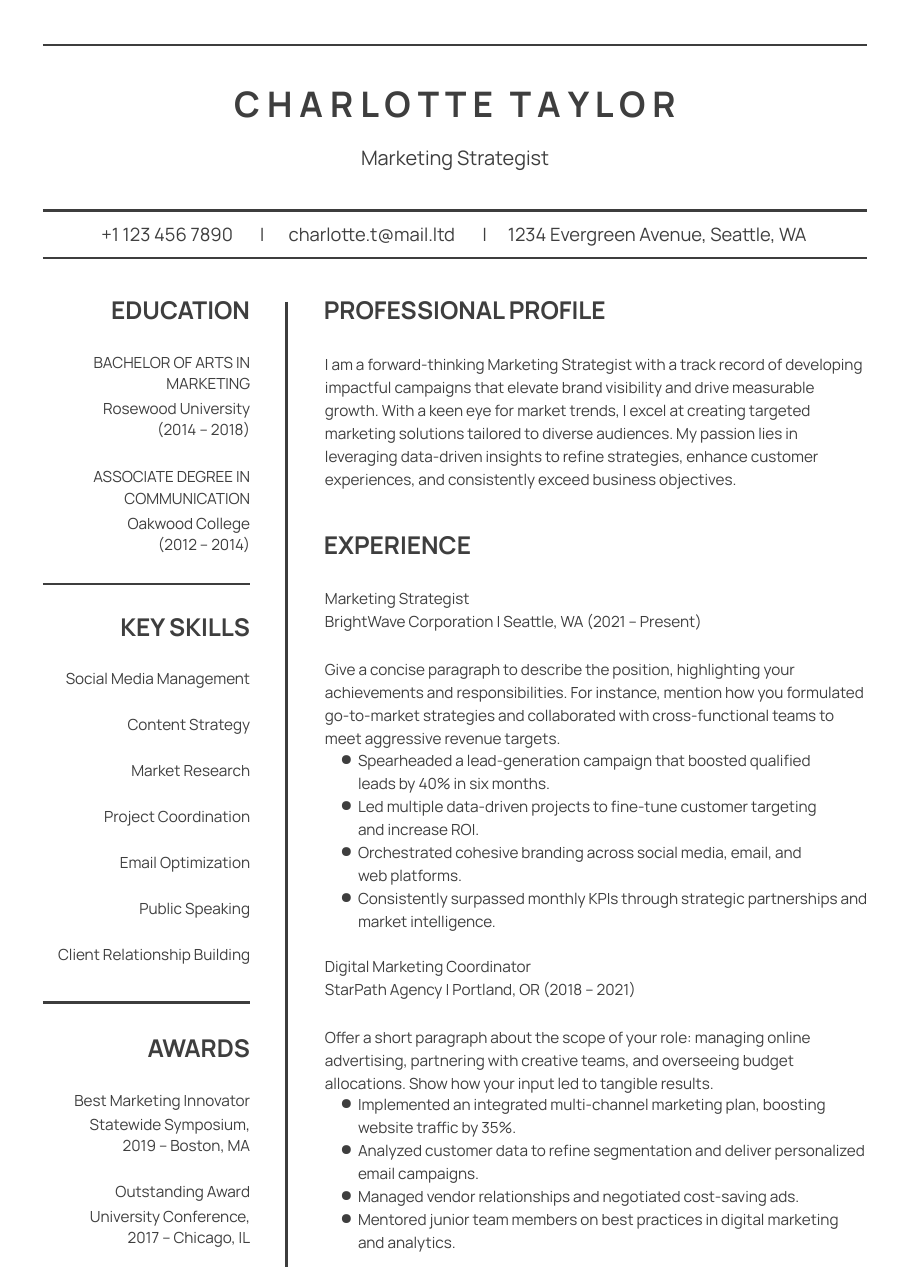
from lxml.etree import SubElement
from pptx import Presentation
from pptx.dml.color import RGBColor
from pptx.enum.shapes import MSO_CONNECTOR
from pptx.enum.text import MSO_AUTO_SIZE, PP_ALIGN
from pptx.oxml.ns import qn
from pptx.util import Inches, Pt

FONT = "Manrope"
INK = "3E3E3E"
RULE = "3D3D3D"
HEAD_H = 0.27
LINE_H = 0.17
BODY_GAP = 0.5


def color(value):
    return RGBColor.from_string(value)


def rule(s, x1, y1, x2, y2):
    ln = s.shapes.add_connector(MSO_CONNECTOR.STRAIGHT, *map(Inches, (x1, y1, x2, y2)))
    ln.line.color.rgb = color(RULE)
    ln.line.width = Pt(1.5)
    SubElement(ln._element.spPr, qn("a:effectLst"))


def add_bullet(p):
    pPr = p._p.get_or_add_pPr()
    pPr.set("marL", str(Inches(0.3)))
    pPr.set("indent", str(Inches(-0.16)))
    SubElement(SubElement(pPr, qn("a:buClr")), qn("a:srgbClr")).set("val", INK)
    SubElement(pPr, qn("a:buChar")).set("char", "●")


def add_tabs(p, stops):
    tabs = SubElement(p._p.get_or_add_pPr(), qn("a:tabLst"))
    for stop in stops:
        tab = SubElement(tabs, qn("a:tab"))
        tab.set("pos", str(Inches(stop)))
        tab.set("algn", "l")


def text(s, x, y, w, h, lines, size=10, bold=False, align=PP_ALIGN.LEFT,
         spacing=1.15, bullets=False):
    """Place a marginless text box with one paragraph per line and return it."""
    tb = s.shapes.add_textbox(*map(Inches, (x, y, w, h)))
    tf = tb.text_frame
    tf.word_wrap = True
    tf.auto_size = MSO_AUTO_SIZE.SHAPE_TO_FIT_TEXT
    tf.margin_left = tf.margin_right = tf.margin_top = tf.margin_bottom = 0
    for i, line in enumerate(lines):
        p = tf.add_paragraph() if i else tf.paragraphs[0]
        p.text = line
        p.alignment = align
        p.line_spacing = spacing
        if bullets:
            add_bullet(p)
        for r in p.runs:
            r.font.name = FONT
            r.font.size = Pt(size)
            r.font.bold = bold
            r.font.color.rgb = color(INK)
    return tb


def heading(s, x, y, w, title, align=PP_ALIGN.LEFT):
    text(s, x, y, w, HEAD_H, [title], 16, True, align, 1.0)


def header(s, x, y, w):
    for dy in (0, 1.5, 1.93):
        rule(s, x, y + dy, x + w, y + dy)
    name = text(s, x, y + 0.34, w, 0.39, ["C H A R L O T T E"], 23, True,
                PP_ALIGN.CENTER, 1.0)
    p = name.text_frame.paragraphs[0]
    for part in (" ", "T A Y L O R"):
        r = p.add_run()
        r.text = part
        r.font.name, r.font.size, r.font.bold = FONT, Pt(23), True
        r.font.color.rgb = color(INK)
    p.runs[1].font._element.set("spc", "600")  # wider gap between the two names
    text(s, x, y + 0.91, w, 0.22, ["Marketing Strategist"], 13,
         align=PP_ALIGN.CENTER, spacing=1.0)
    contact = text(s, x + 0.53, y + 1.62, w - 0.53, 0.2,
                   ["+1 123 456 7890\t|\tcharlotte.t@mail.ltd\t|\t"
                    "1234 Evergreen Avenue, Seattle, WA"], 12, spacing=1.0)
    add_tabs(contact.text_frame.paragraphs[0], (1.44, 1.7, 3.46, 3.69))


def side_entries(s, x, y, w, title, entries, title_h, pitch):
    """Right-aligned heading, then entries of a title and its details."""
    heading(s, x, y, w, title, PP_ALIGN.RIGHT)
    for i, (name, details) in enumerate(entries):
        top = y + BODY_GAP + i * pitch
        text(s, x, top, w, title_h, name, align=PP_ALIGN.RIGHT)
        text(s, x, top + title_h + 0.05, w, 0.36, details, align=PP_ALIGN.RIGHT)


def skills(s, x, y, w, names, pitch=0.418):
    heading(s, x, y, w, "KEY SKILLS", PP_ALIGN.RIGHT)
    for i, name in enumerate(names):
        text(s, x, y + 0.49 + i * pitch, w, LINE_H, [name], align=PP_ALIGN.RIGHT)


def profile(s, x, y, w):
    heading(s, x, y, w, "PROFESSIONAL PROFILE")
    text(s, x + 0.01, y + BODY_GAP, w, 1.43, [
        "I am a forward-thinking Marketing Strategist with a track record of "
        "developing impactful campaigns that elevate brand visibility and drive "
        "measurable growth. With a keen eye for market trends, I excel at creating "
        "targeted marketing solutions tailored to diverse audiences. My passion lies "
        "in leveraging data-driven insights to refine strategies, enhance customer "
        "experiences, and consistently exceed business objectives."], spacing=1.25)


def job(s, x, y, w, role, employer, intro, intro_h, duties):
    text(s, x, y, w, LINE_H, [role])
    text(s, x, y + 0.215, w, LINE_H, [employer])
    text(s, x, y + 0.63, w, intro_h, [intro], spacing=1.25)
    text(s, x, y + 0.63 + intro_h, w, 1.43, duties, spacing=1.25, bullets=True)


def resume(prs):
    s = prs.slides.add_slide(prs.slide_layouts[6])
    left, side_w, main_x, main_w = 0.4, 1.87, 2.94, 4.92
    header(s, 0.39, 0.41, 7.48)
    for y in (5.3, 9.1):
        rule(s, 0.39, y, left + side_w, y)
    rule(s, 2.6, 2.74, 2.6, 11.5)

    side_entries(s, left, 2.68, side_w, "EDUCATION", [
        (["BACHELOR OF ARTS IN MARKETING"], ["Rosewood University", "(2014 – 2018)"]),
        (["ASSOCIATE DEGREE IN", "COMMUNICATION"], ["Oakwood College", "(2012 – 2014)"]),
    ], 0.37, 1.04)
    skills(s, left - 0.07, 5.56, side_w + 0.07, [
        "Social Media Management", "Content Strategy", "Market Research",
        "Project Coordination", "Email Optimization", "Public Speaking",
        "Client Relationship Building"])
    side_entries(s, left, 9.38, side_w, "AWARDS", [
        (["Best Marketing Innovator"], ["Statewide Symposium,", "2019 – Boston, MA"]),
        (["Outstanding Award"], ["University Conference,", "2017 – Chicago, IL"]),
    ], LINE_H, 0.83)

    profile(s, main_x, 2.68, main_w)
    heading(s, main_x, 4.81, main_w, "EXPERIENCE")
    job(s, main_x + 0.01, 5.32, main_w, "Marketing Strategist",
        "BrightWave Corporation | Seattle, WA (2021 – Present)",
        "Give a concise paragraph to describe the position, highlighting your "
        "achievements and responsibilities. For instance, mention how you formulated "
        "go-to-market strategies and collaborated with cross-functional teams to meet "
        "aggressive revenue targets.", 0.83, [
            "Spearheaded a lead-generation campaign that boosted qualified\v"
            "leads by 40% in six months.",
            "Led multiple data-driven projects to fine-tune customer targeting\v"
            "and increase ROI.",
            "Orchestrated cohesive branding across social media, email, and\v"
            "web platforms.",
            "Consistently surpassed monthly KPIs through strategic partnerships and "
            "market intelligence."])
    job(s, main_x + 0.01, 8.66, main_w, "Digital Marketing Coordinator",
        "StarPath Agency | Portland, OR (2018 – 2021)",
        "Offer a short paragraph about the scope of your role: managing online "
        "advertising, partnering with creative teams, and overseeing budget "
        "allocations. Show how your input led to tangible results.", 0.61, [
            "Implemented an integrated multi-channel marketing plan, boosting website "
            "traffic by 35%.",
            "Analyzed customer data to refine segmentation and deliver personalized "
            "email campaigns.",
            "Managed vendor relationships and negotiated cost-saving ads.",
            "Mentored junior team members on best practices in digital marketing and "
            "analytics."])


def main():
    prs = Presentation()
    prs.slide_width, prs.slide_height = Inches(8.27), Inches(11.69)
    resume(prs)
    prs.save("out.pptx")


if __name__ == "__main__":
    main()
